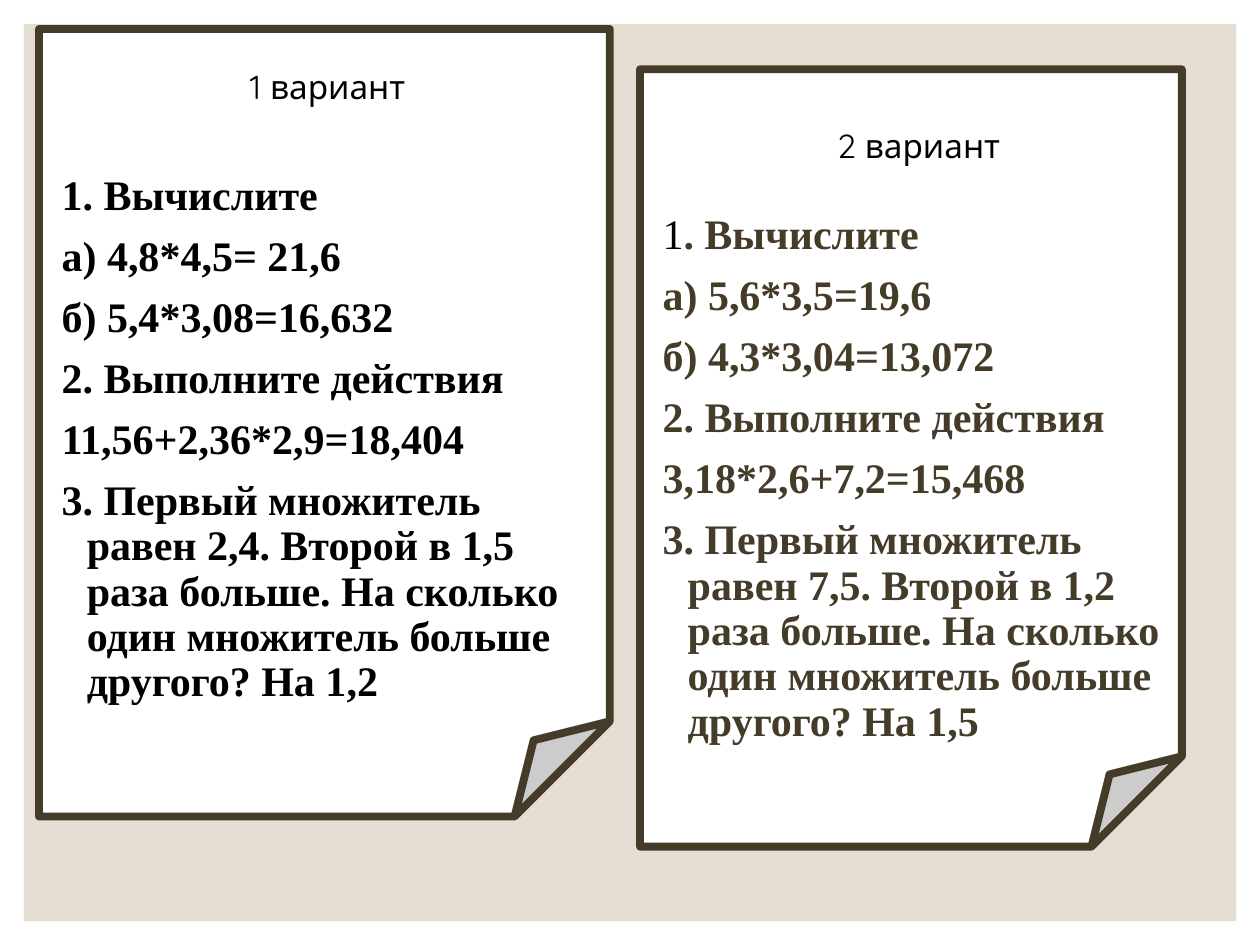
from pptx import Presentation
from pptx.dml.color import RGBColor
from pptx.enum.shapes import MSO_SHAPE
from pptx.enum.text import MSO_ANCHOR, PP_ALIGN
from pptx.util import Emu, Pt

PX = 9144  # 100 px to the inch
BLACK = RGBColor(0x00, 0x00, 0x00)
WHITE = RGBColor(0xFF, 0xFF, 0xFF)
BEIGE = RGBColor(0xE3, 0xDE, 0xD1)
BROWN = RGBColor(0x44, 0x3C, 0x29)

TASK_WIDTH = 442
TITLE_HEIGHT = 75
HANGING = 20


def px(length):
    return Emu(length * PX)


class SlideBuilder:
    """Holds the text style and the slide being built."""

    title_font, title_size = "Quicksand", Pt(19)
    task_font, task_size = "Times New Roman", Pt(24)

    def __init__(self, slide):
        self.slide = slide

    def shape(self, kind, box, fill, line=None):
        shape = self.slide.shapes.add_shape(kind, *map(px, box))
        shape.shadow.inherit = False
        shape.fill.solid()
        shape.fill.fore_color.rgb = fill
        if line is None:
            shape.line.fill.background()
        else:
            shape.line.color.rgb = line
            shape.line.width = Pt(4.5)

    def text_frame(self, box):
        frame = self.slide.shapes.add_textbox(*map(px, box)).text_frame
        frame.word_wrap = True
        return frame

    def title(self, text, left, top):
        frame = self.text_frame((left, top, TASK_WIDTH, TITLE_HEIGHT))
        frame.vertical_anchor = MSO_ANCHOR.MIDDLE
        paragraph = frame.paragraphs[0]
        paragraph.text = text
        paragraph.alignment = PP_ALIGN.CENTER
        paragraph.font.name = self.title_font
        paragraph.font.size = self.title_size
        paragraph.font.color.rgb = BLACK

    def tasks(self, lines, box, color, plain_start=""):
        """Writes hanging bold lines; plain_start opens the first one in plain black."""
        frame = self.text_frame(box)
        for index, line in enumerate(lines):
            paragraph = frame.add_paragraph() if index else frame.paragraphs[0]
            properties = paragraph._p.get_or_add_pPr()
            properties.set("marL", str(px(HANGING)))
            properties.set("indent", str(-px(HANGING)))
            paragraph.line_spacing = 0.9
            if index:
                paragraph.space_before = Pt(9)
            paragraph.font.name = self.task_font
            paragraph.font.size = self.task_size
            if plain_start and index == 0:
                self.run(paragraph, plain_start, BLACK, False)
            self.run(paragraph, line, color, True)

    def run(self, paragraph, text, color, bold):
        run = paragraph.add_run()
        run.text = text
        run.font.bold = bold
        run.font.color.rgb = color


def main():
    presentation = Presentation()
    presentation.slide_width, presentation.slide_height = px(1000), px(750)
    slide = presentation.slides.add_slide(presentation.slide_layouts[6])
    builder = SlideBuilder(slide)

    builder.shape(MSO_SHAPE.RECTANGLE, (19, 19, 962, 712), BEIGE)
    for sheet in ((508, 55, 430, 617), (31, 23, 453, 625)):
        builder.shape(MSO_SHAPE.FOLDED_CORNER, sheet, WHITE, BROWN)

    builder.title("1 вариант", 39, 31)
    builder.tasks(
        [
            "1. Вычислите",
            "а) 4,8*4,5= 21,6",
            "б) 5,4*3,08=16,632",
            "2. Выполните действия",
            "11,56+2,36*2,9=18,404",
            "3. Первый множитель равен 2,4. Второй в 1,5 раза больше. "
            "На сколько один множитель больше другого? На 1,2",
        ],
        (39, 133, TASK_WIDTH, 477),
        BLACK,
    )

    builder.title("2 вариант", 508, 78)
    builder.tasks(
        [
            ". Вычислите",
            "а) 5,6*3,5=19,6",
            "б) 4,3*3,04=13,072",
            "2. Выполните действия",
            "3,18*2,6+7,2=15,468",
            "3. Первый множитель равен 7,5. Второй в 1,2 раза больше. "
            "На сколько один множитель больше другого? На 1,5",
        ],
        (516, 164, TASK_WIDTH, 442),
        BROWN,
        plain_start="1",
    )

    presentation.save("out.pptx")


if __name__ == "__main__":
    main()
